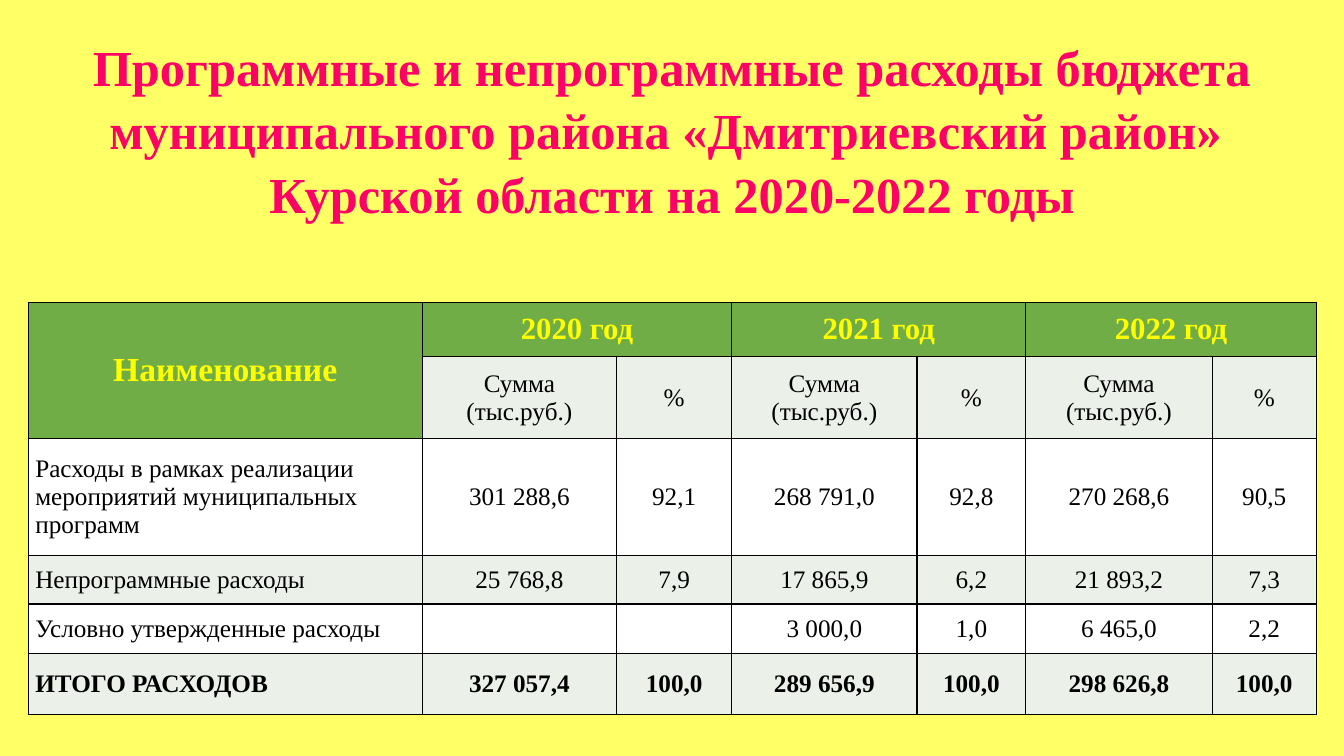
import pptx
import pptx.util
import pptx.dml.color
import pptx.enum.text
import pptx.oxml

Cm, Pt = pptx.util.Cm, pptx.util.Pt
ALIGN = pptx.enum.text.PP_ALIGN
MIDDLE = pptx.enum.text.MSO_ANCHOR.MIDDLE
FACE = "Times New Roman"
GREEN, PALE, WHITE = "70AD47", "EBF1E9", "FFFFFF"
YELLOW, BLACK = "FFFF00", "000000"


def paint(target, color):
    """Give a fill a solid colour, or set the colour of a font."""
    if hasattr(target, "solid"):
        target.solid()
        target.fore_color.rgb = pptx.dml.color.RGBColor.from_string(color)
    else:
        target.color.rgb = pptx.dml.color.RGBColor.from_string(color)


def write(frame, text, align, color, **form):
    line = frame.paragraphs[0]
    line.text = text
    line.alignment = align
    for run in line.runs:
        run.font.name = FACE
        for key, value in form.items():
            setattr(run.font, key, value)
        paint(run.font, color)


deck = pptx.Presentation()
deck.slide_width, deck.slide_height = Cm(33.87), Cm(19.05)
slide = deck.slides.add_slide(deck.slide_layouts[5])
paint(slide.background.fill, "FFFF66")

# Title
title = slide.shapes.title
place = {"left": 0, "top": 0, "width": 33.87, "height": 6.45}
for key, value in place.items():
    setattr(title, key, Cm(value))
frame = title.text_frame
frame.word_wrap = True
frame.auto_size = pptx.enum.text.MSO_AUTO_SIZE.NONE
frame.vertical_anchor = MIDDLE
write(frame, "Программные и непрограммные расходы бюджета "
      "муниципального района «Дмитриевский район» \v"
      "Курской области на 2020-2022 годы",
      ALIGN.CENTER, "FF0066", size=Pt(36), bold=True)
frame.paragraphs[0].line_spacing = 1.05

# Table
rows = [
    ["Наименование", "2020 год", "", "2021 год", "", "2022 год", ""],
    [""] + ["Сумма (тыс.руб.)", "%"] * 3,
    ["Расходы в рамках реализации мероприятий муниципальных программ",
     "301 288,6", "92,1", "268 791,0", "92,8", "270 268,6", "90,5"],
    ["Непрограммные расходы",
     "25 768,8", "7,9", "17 865,9", "6,2", "21 893,2", "7,3"],
    ["Условно утвержденные расходы",
     "", "", "3 000,0", "1,0", "6 465,0", "2,2"],
    ["ИТОГО РАСХОДОВ",
     "327 057,4", "100,0", "289 656,9", "100,0", "298 626,8", "100,0"],
]
widths = [9.93, 4.9, 2.9, 4.67, 2.74, 4.7, 2.62]
heights = [1.37, 2.06, 2.95, 1.22, 1.24, 1.55]
table = slide.shapes.add_table(
    len(rows), len(widths), Cm(0.71), Cm(7.62),
    Cm(sum(widths)), Cm(sum(heights))).table
for col, width in zip(table.columns, widths):
    col.width = Cm(width)
for row, height in zip(table.rows, heights):
    row.height = Cm(height)

space = {"margin_left": 0.18, "margin_right": 0.18,
         "margin_top": 0, "margin_bottom": 0}
border = ('<a:{} xmlns:a="http://schemas.openxmlformats.org/drawingml/2006/main"'
          ' w="12700"><a:solidFill><a:srgbClr val="{}"/></a:solidFill></a:{}>')
last = len(rows) - 1
for r, texts in enumerate(rows):
    for c, text in enumerate(texts):
        cell = table.cell(r, c)
        head = r == 0 or (r == 1 and c == 0)
        cell.vertical_anchor = MIDDLE
        if r > 1:
            for key, value in space.items():
                setattr(cell, key, Cm(value))
        props = cell._tc.get_or_add_tcPr()
        for side in ("lnL", "lnR", "lnT", "lnB"):
            props.append(pptx.oxml.parse_xml(border.format(side, BLACK, side)))
        paint(cell.fill, GREEN if head else PALE if r % 2 else WHITE)
        size = 18 if not head else 24 if c == 0 else 22
        write(cell.text_frame, text,
              ALIGN.LEFT if c == 0 and r > 1 else ALIGN.CENTER,
              YELLOW if head else BLACK,
              size=Pt(size), bold=head or r == last)

table.cell(0, 0).merge(table.cell(1, 0))
for c in (1, 3, 5):
    table.cell(0, c).merge(table.cell(0, c + 1))

deck.save("out.pptx")
